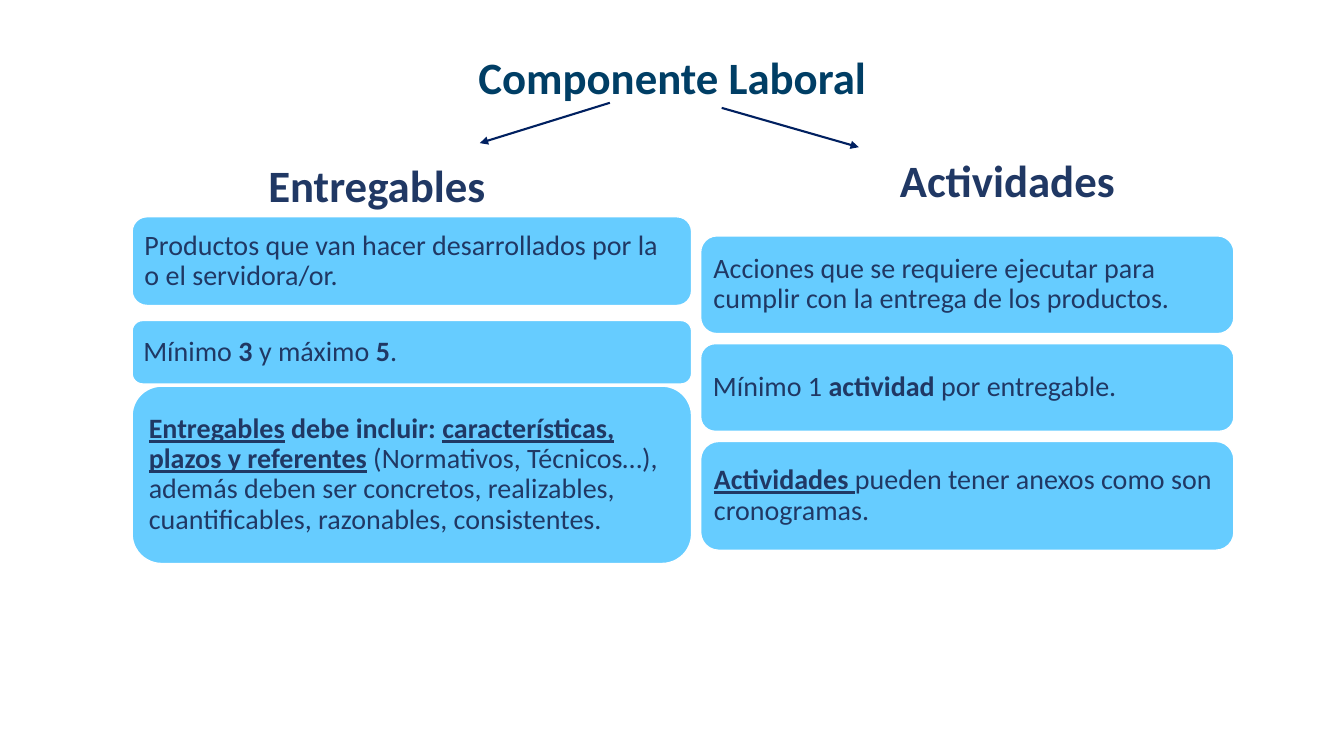
from dataclasses import dataclass

from lxml import etree
from pptx import Presentation
from pptx.dml.color import RGBColor
from pptx.enum.shapes import MSO_CONNECTOR, MSO_SHAPE
from pptx.enum.text import MSO_ANCHOR, PP_ALIGN
from pptx.oxml.ns import qn
from pptx.util import Emu, Inches, Pt

LEFT, CENTER = PP_ALIGN.LEFT, PP_ALIGN.CENTER
MIDDLE, BOTTOM = MSO_ANCHOR.MIDDLE, MSO_ANCHOR.BOTTOM
ROUND, STRAIGHT = MSO_SHAPE.ROUNDED_RECTANGLE, MSO_CONNECTOR.STRAIGHT

WIDE, HIGH = Inches(13.33), Inches(7.5)
NAVY, TEAL, SKY, WHITE, INK = "203864", "003E65", "66CCFF", "FFFFFF", "002060"
PLAIN = {"bold": False, "underline": False}
BOLD = {"bold": True, "underline": False}
UNDER = {"bold": True, "underline": True}
PAD, ROUNDING = Inches(0.08), 0.049  # inner margin, and the share a corner adds to it

Run = tuple[str, dict]


# Every length below is a percentage of the slide's width or height
@dataclass
class Head:
    text: str
    x: float
    y: float
    w: float
    h: float
    color: str
    anchor: MSO_ANCHOR


@dataclass
class Card:
    gap: float  # space above
    h: float
    runs: list[Run]


@dataclass
class Stack:
    x: float
    y: float
    w: float
    cards: list[Card]


@dataclass
class Arrow:
    x1: float
    y1: float
    x2: float
    y2: float


HEADS = [
    Head("Componente Laboral", 6.9, 5.33, 86.25, 10.53, TEAL, MIDDLE),
    Head("Entregables", 6.9, 20.67, 42.3, 8, NAVY, BOTTOM),
    Head("Actividades", 53.7, 20.13, 42.53, 8, NAVY, BOTTOM),
]
ARROWS = [Arrow(53.7, 14.27, 63.9, 19.47), Arrow(45.38, 13.6, 35.7, 18.93)]
STACKS = [
    Stack(52.13, 31.2, 39.68, [
        Card(0, 12.93, [("Acciones que se requiere ejecutar para cumplir con la "
                         "entrega de los productos.", PLAIN)]),
        Card(1.33, 11.6, [("Mínimo 1 ", PLAIN), ("actividad", BOLD),
                          (" por entregable.", PLAIN)]),
        Card(1.33, 14.4, [("Actividades ", UNDER),
                          ("pueden tener anexos como son cronogramas.", PLAIN)]),
    ]),
    Stack(9.83, 28.67, 41.63, [
        Card(0, 11.73, [("Productos que van hacer desarrollados por la "
                         "o el servidora/or.", PLAIN)]),
        Card(2, 8.4, [("Mínimo ", PLAIN), ("3 ", BOLD), ("y máximo ", PLAIN),
                      ("5", BOLD), (".", PLAIN)]),
        Card(0.27, 23.47, [("Entregables", UNDER), (" ", PLAIN), ("debe incluir: ", BOLD),
                           ("características, plazos y referentes", UNDER),
                           (" (Normativos, Técnicos…), además deben ser concretos, "
                            "realizables, cuantificables, razonables, consistentes.",
                            PLAIN)]),
    ]),
]


def across(share: float) -> Emu:
    return Emu(round(WIDE * share / 100))


def down(share: float) -> Emu:
    return Emu(round(HIGH * share / 100))


def paint(target, color: str) -> None:
    target.rgb = RGBColor.from_string(color)


def write(frame, runs: list[Run], size: float, color: str, align: PP_ALIGN) -> None:
    frame.word_wrap = True
    para = frame.paragraphs[0]
    para.alignment, para.line_spacing = align, 0.9
    for text, style in runs:
        run = para.add_run()
        run.text = text
        for key, value in {"name": "Calibri", "size": Pt(size), **style}.items():
            setattr(run.font, key, value)
        paint(run.font.color, color)


def add_head(slide, head: Head) -> None:
    box = slide.shapes.add_textbox(across(head.x), down(head.y),
                                   across(head.w), down(head.h))
    box.text_frame.vertical_anchor = head.anchor
    write(box.text_frame, [(head.text, BOLD)], 32, head.color, CENTER)


def add_card(slide, stack: Stack, y: float, card: Card) -> None:
    shape = slide.shapes.add_shape(ROUND, across(stack.x), down(y),
                                   across(stack.w), down(card.h))
    shape.shadow.inherit = False
    shape.fill.solid()
    paint(shape.fill.fore_color, SKY)
    paint(shape.line.color, WHITE)
    shape.line.width = Pt(1)
    frame = shape.text_frame
    frame.vertical_anchor = MIDDLE
    # Insets stand clear of the rounded corner already, so take only the padding
    inset = Emu(round(PAD + ROUNDING * shape.height))
    inner = Emu(round(inset - ROUNDING * shape.height))
    for side in ("left", "right", "top", "bottom"):
        setattr(frame, f"margin_{side}", inner)
    write(frame, card.runs, 20, NAVY, LEFT)


def add_stack(slide, stack: Stack) -> None:
    y = stack.y
    for card in stack.cards:
        y += card.gap
        add_card(slide, stack, y, card)
        y += card.h


def add_arrow(slide, arrow: Arrow) -> None:
    link = slide.shapes.add_connector(STRAIGHT, across(arrow.x1), down(arrow.y1),
                                      across(arrow.x2), down(arrow.y2))
    paint(link.line.color, INK)
    link.line.width = Pt(1.5)
    etree.SubElement(link.line._get_or_add_ln(), qn("a:tailEnd"), type="triangle")
    etree.SubElement(link._element.spPr, qn("a:effectLst"))


def main() -> None:
    deck = Presentation()
    deck.slide_width, deck.slide_height = WIDE, HIGH
    slide = deck.slides.add_slide(deck.slide_layouts[6])

    # Title and the two column headings
    for head in HEADS:
        add_head(slide, head)
    # Arrows from the title to the headings
    for arrow in ARROWS:
        add_arrow(slide, arrow)
    # Columns of cards
    for stack in STACKS:
        add_stack(slide, stack)

    deck.save("out.pptx")


if __name__ == "__main__":
    main()
